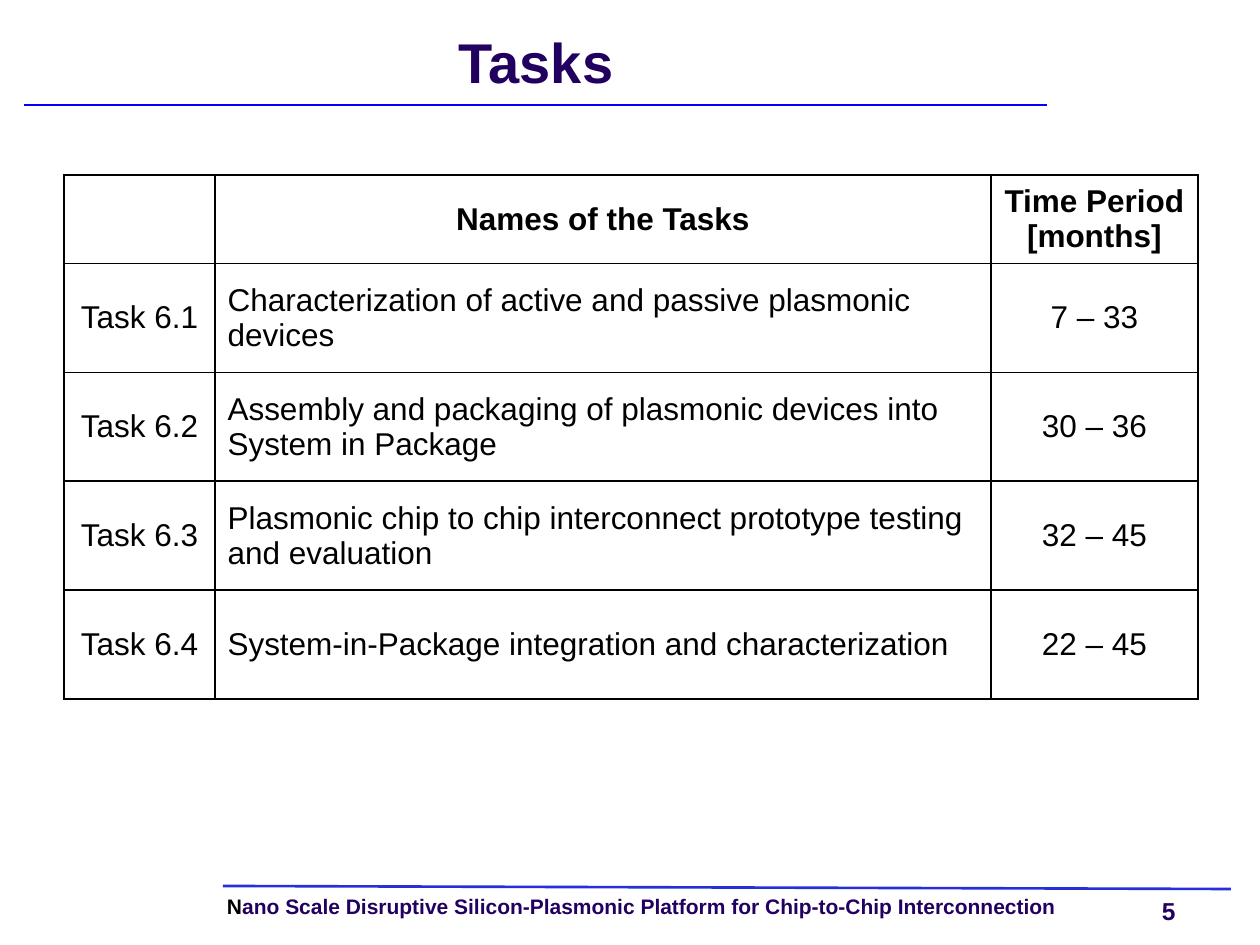
from dataclasses import dataclass

from lxml.etree import SubElement
from pptx import Presentation
from pptx.dml.color import RGBColor
from pptx.enum.shapes import MSO_CONNECTOR as Connector
from pptx.enum.text import MSO_ANCHOR as Anchor, PP_ALIGN as Align
from pptx.oxml.ns import qn
from pptx.util import Emu, Pt

PX_PER_INCH = 126


@dataclass(frozen=True)
class Theme:
    font: str = "Arial"
    purple: str = "220060"
    black: str = "000000"
    title_rule: str = "0000FF"
    footer_rule: str = "262FDA"
    title_size: int = 32
    table_size: int = 18
    number_size: int = 14
    footer_size: int = 12
    rule_width: float = 1.5
    border_width: float = 1


@dataclass(frozen=True)
class Rule:
    start: tuple[int, int]
    end: tuple[int, int]
    color: str


@dataclass(frozen=True)
class Task:
    label: str
    name: str
    months: str


THEME = Theme()

RULES = [
    Rule((223, 886), (1231, 889), THEME.footer_rule),
    Rule((24, 105), (1047, 105), THEME.title_rule),
]

HEADER = Task("", "Names of the Tasks", "Time Period [months]")
TASKS = [
    Task("Task 6.1", "Characterization of active and passive plasmonic devices", "7 – 33"),
    Task("Task 6.2", "Assembly and packaging of plasmonic devices into System in Package", "30 – 36"),
    Task("Task 6.3", "Plasmonic chip to chip interconnect prototype testing and evaluation", "32 – 45"),
    Task("Task 6.4", "System-in-Package integration and characterization", "22 – 45"),
]
COLUMN_WIDTHS = [151, 776, 207]
HEADER_HEIGHT, TASK_HEIGHT = 88, 109


def px(length: int) -> Emu:
    return Emu(round(length * 914400 / PX_PER_INCH))


def write(frame, *spans, size, bold=False, align=Align.LEFT, anchor=Anchor.TOP,
          spacing=None) -> None:
    """Fill a text frame with one paragraph of (text, color) spans."""
    frame.vertical_anchor = anchor
    para = frame.paragraphs[0]
    para.alignment = align
    para.line_spacing = spacing
    para.font.size = Pt(size)
    for text, color in spans:
        span = para.add_run()
        span.text = text
        span.font.name = THEME.font
        span.font.size = Pt(size)
        span.font.bold = bold
        span.font.color.rgb = RGBColor.from_string(color)


def add_text(page, left: int, top: int, width: int, height: int, *spans,
             wrap: bool = True, **text_format) -> None:
    box = page.shapes.add_textbox(px(left), px(top), px(width), px(height))
    frame = box.text_frame
    frame.word_wrap = wrap
    frame.margin_left = frame.margin_right = 0
    frame.margin_top = frame.margin_bottom = 0
    write(frame, *spans, **text_format)


def add_rule(page, rule: Rule) -> None:
    line = page.shapes.add_connector(
        Connector.STRAIGHT, *map(px, rule.start), *map(px, rule.end))
    line.line.color.rgb = RGBColor.from_string(rule.color)
    line.line.width = Pt(THEME.rule_width)
    SubElement(line._element.spPr, qn("a:effectLst"))


def style_cell(cell) -> None:
    """Draw a solid border on every side and leave the cell unfilled."""
    properties = cell._tc.get_or_add_tcPr()
    for side in ("lnL", "lnR", "lnT", "lnB"):
        border = SubElement(properties, qn(f"a:{side}"), w=str(Pt(THEME.border_width)))
        SubElement(SubElement(border, qn("a:solidFill")), qn("a:srgbClr"), val=THEME.black)
    cell.fill.background()


def add_task_table(page, left: int, top: int) -> None:
    heights = [HEADER_HEIGHT] + [TASK_HEIGHT] * len(TASKS)
    table = page.shapes.add_table(
        len(heights), len(COLUMN_WIDTHS), px(left), px(top),
        px(sum(COLUMN_WIDTHS)), px(sum(heights))).table
    table.first_row = table.horz_banding = False
    for column, width in zip(table.columns, COLUMN_WIDTHS):
        column.width = px(width)
    for row, height, task in zip(table.rows, heights, [HEADER, *TASKS]):
        row.height = px(height)
        is_header = task is HEADER
        for cell, text in zip(row.cells, (task.label, task.name, task.months)):
            style_cell(cell)
            cell.vertical_anchor = Anchor.MIDDLE
            is_task_name = text == task.name and not is_header
            spans = [(text, THEME.black)] if text else []
            write(cell.text_frame, *spans, size=THEME.table_size, bold=is_header,
                  align=Align.LEFT if is_task_name else Align.CENTER,
                  anchor=Anchor.MIDDLE)


def main() -> None:
    deck = Presentation()
    deck.slide_width, deck.slide_height = px(1260), px(945)
    page = deck.slides.add_slide(deck.slide_layouts[6])

    # Footer and page number
    add_text(page, 227, 896, 900, 23, ("N", THEME.black),
             ("ano Scale Disruptive Silicon-Plasmonic Platform for Chip-to-Chip Interconnection",
              THEME.purple),
             size=THEME.footer_size, bold=True, spacing=0.9)
    add_text(page, 1162, 896, 50, 29, ("5", THEME.purple), wrap=False,
             size=THEME.number_size, bold=True)

    # Rules under the title and above the footer
    for rule in RULES:
        add_rule(page, rule)

    # Title
    add_text(page, 25, 25, 1022, 84, ("Tasks", THEME.purple), size=THEME.title_size,
             bold=True, align=Align.CENTER, anchor=Anchor.MIDDLE,
             spacing=Pt(THEME.title_size))

    # Task table
    add_task_table(page, 64, 175)

    deck.save("out.pptx")


if __name__ == "__main__":
    main()
